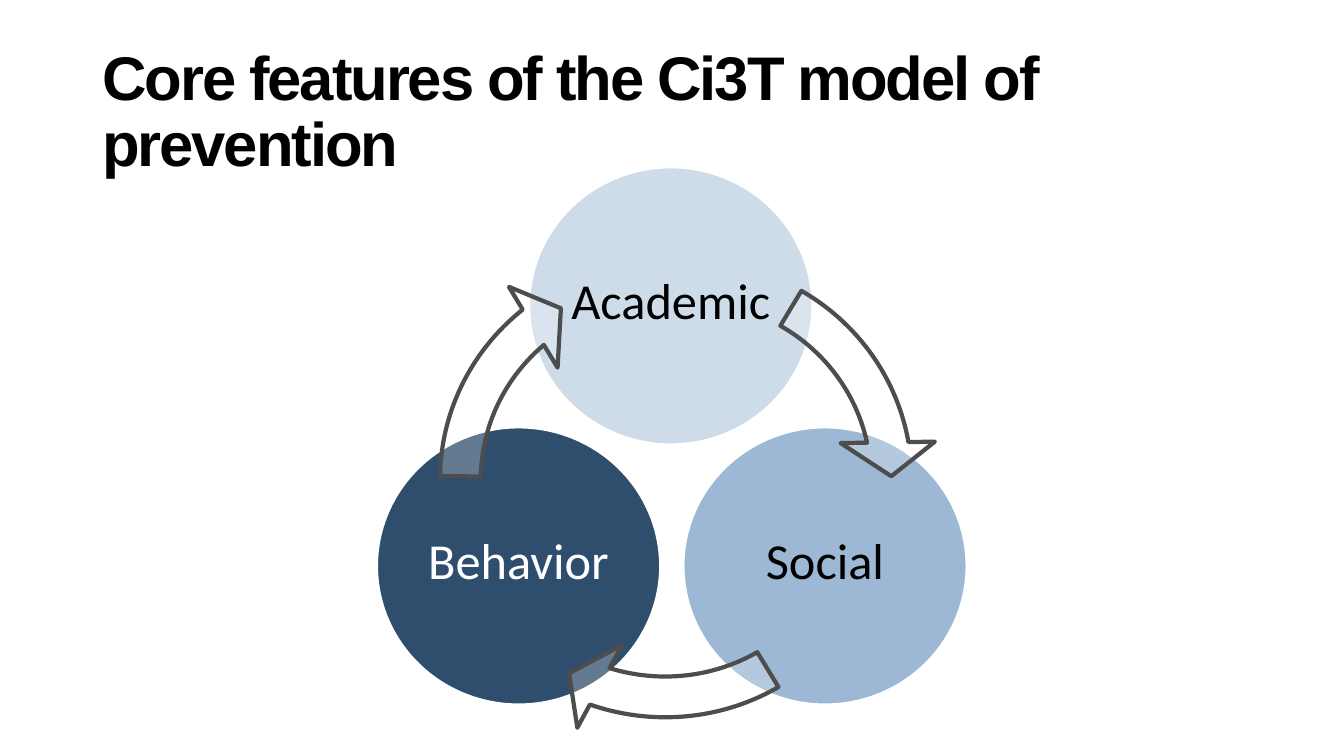
from dataclasses import dataclass

from pptx import Presentation
from pptx.dml.color import RGBColor
from pptx.enum.shapes import MSO_SHAPE
from pptx.enum.text import MSO_ANCHOR, PP_ALIGN
from pptx.oxml import parse_xml
from pptx.oxml.ns import nsdecls, qn
from pptx.shapes.autoshape import Shape
from pptx.slide import Slide
from pptx.util import Pt

COLORS = {
    "black": "000000",
    "white": "FFFFFF",
    "pale": "CEDCEA",
    "medium": "9CB8D4",
    "navy": "2F4E6D",
    "outline": "4D4D4D",
}
CIRCLE_WIDTH, CIRCLE_HEIGHT = 203.76, 199.44
LOWER_ROW_TOP = 304.56
ARROW_WIDTH, ARROW_HEIGHT = 357.84, 350.64
LINE_WIDTH = 3


@dataclass
class Domain:
    label: str
    left: float
    top: float
    fill: str
    text: str


@dataclass
class CycleArrow:
    left: float
    top: float
    rotation: float
    head_angle: float
    tail_angle: float


DOMAINS = [
    Domain("Academic", 377.28, 118.8, "pale", "black"),
    Domain("Behavior", 268.56, LOWER_ROW_TOP, "navy", "white"),
    Domain("Social", 487.44, LOWER_ROW_TOP, "medium", "black"),
]
ARROWS = [
    CycleArrow(295.2, 167.04, 180, 29.62, 0.53),
    CycleArrow(312.48, 167.04, 180, 101.71, 72.62),
    CycleArrow(295.2, 180.72, 187.9, 168.55, 138.47),
]


def color(name: str) -> RGBColor:
    return RGBColor.from_string(COLORS[name])


def style(shape: Shape, fill: str, line: str) -> None:
    shape.shadow.inherit = False
    shape.fill.solid()
    shape.fill.fore_color.rgb = color(fill)
    shape.line.color.rgb = color(line)
    shape.line.width = Pt(LINE_WIDTH)


def add_domain(slide: Slide, domain: Domain) -> None:
    shape = slide.shapes.add_shape(
        MSO_SHAPE.OVAL, Pt(domain.left), Pt(domain.top), Pt(CIRCLE_WIDTH), Pt(CIRCLE_HEIGHT)
    )
    style(shape, domain.fill, "white")
    frame = shape.text_frame
    frame.margin_left = frame.margin_right = frame.margin_top = 0
    frame.margin_bottom = Pt(4.5)
    frame.vertical_anchor = MSO_ANCHOR.MIDDLE
    paragraph = frame.paragraphs[0]
    paragraph.text = domain.label
    paragraph.alignment = PP_ALIGN.CENTER
    paragraph.line_spacing = 0.9
    paragraph.font.name = "Calibri"
    paragraph.font.size = Pt(36)
    paragraph.font.color.rgb = color(domain.text)


def add_cycle_arrow(slide: Slide, arrow: CycleArrow) -> None:
    shape = slide.shapes.add_shape(
        MSO_SHAPE.CIRCULAR_ARROW, Pt(arrow.left), Pt(arrow.top), Pt(ARROW_WIDTH), Pt(ARROW_HEIGHT)
    )
    shape.rotation = arrow.rotation
    values = (0.083, 5.765, arrow.head_angle, arrow.tail_angle, 0.096)
    for index, value in enumerate(values):
        shape.adjustments[index] = value
    style(shape, "white", "outline")
    # Let the circles show through the arrow
    fill_color = shape.fill._xPr.find(qn("a:solidFill"))[0]
    fill_color.append(parse_xml(f'<a:alpha {nsdecls("a")} val="25000"/>'))


def add_title(slide: Slide, text: str) -> None:
    shape = slide.shapes.add_textbox(Pt(66), Pt(28.8), Pt(828), Pt(104.4))
    frame = shape.text_frame
    frame.word_wrap = True
    frame.vertical_anchor = MSO_ANCHOR.MIDDLE
    paragraph = frame.paragraphs[0]
    paragraph.line_spacing = 0.9
    run = paragraph.add_run()
    run.text = text
    paragraph.font.name = "Arial"
    paragraph.font.size = Pt(44)
    paragraph.font.bold = True
    paragraph.font.color.rgb = color("black")
    # Tighten the letter spacing
    run.font._element.set("spc", "-150")


def main() -> None:
    presentation = Presentation()
    presentation.slide_width, presentation.slide_height = Pt(960), Pt(540)
    slide = presentation.slides.add_slide(presentation.slide_layouts[6])

    # Cycle of the three domains
    for domain in DOMAINS:
        add_domain(slide, domain)
    for arrow in ARROWS:
        add_cycle_arrow(slide, arrow)

    # Title
    add_title(slide, "Core features of the Ci3T model of prevention")

    presentation.save("out.pptx")


if __name__ == "__main__":
    main()
